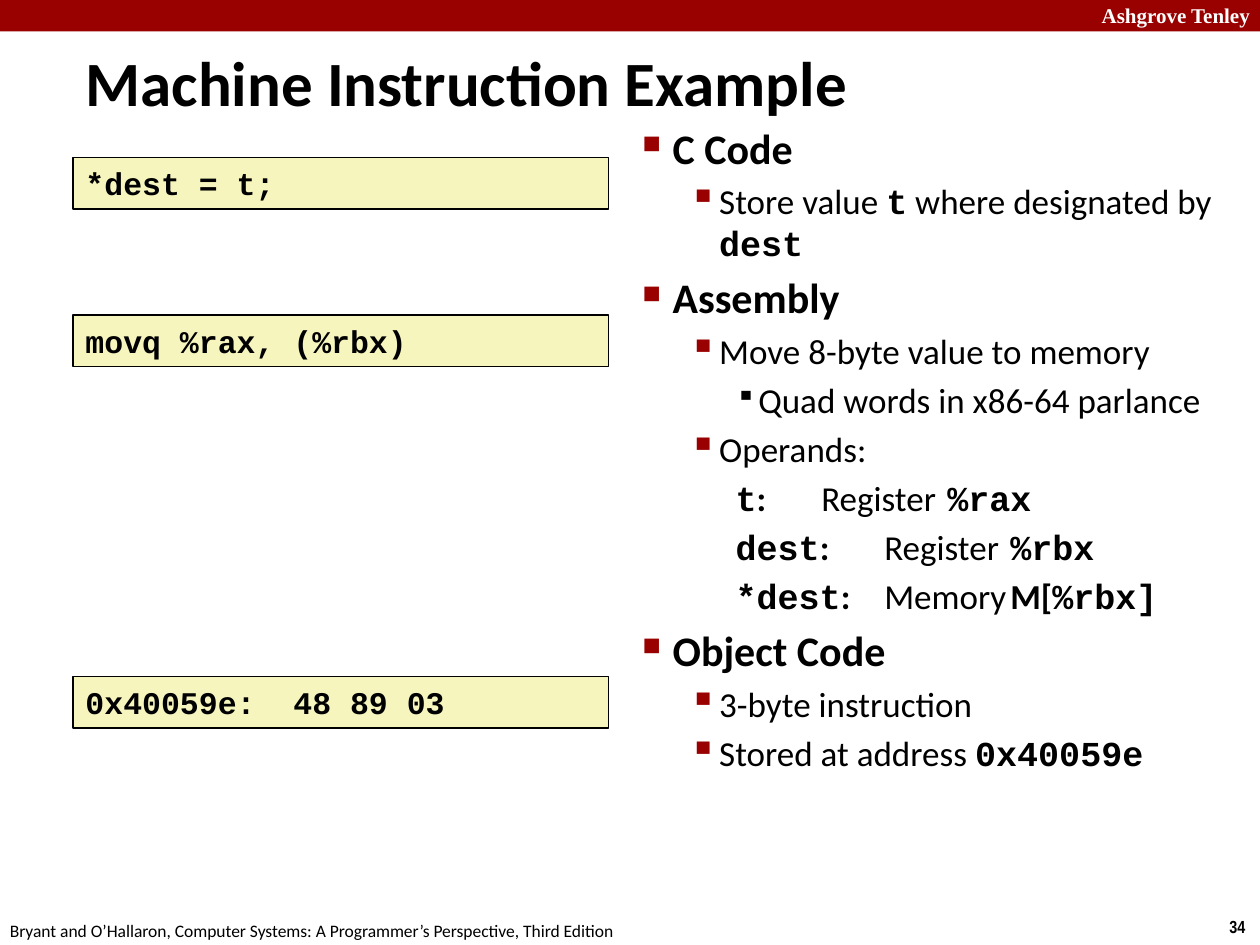
from lxml.etree import SubElement
from pptx import Presentation
from pptx.dml.color import RGBColor
from pptx.enum.shapes import MSO_SHAPE as Shape
from pptx.enum.text import MSO_ANCHOR as Anchor, MSO_AUTO_SIZE as AutoSize, PP_ALIGN as Align
from pptx.oxml.ns import qn
from pptx.util import Pt

BLACK = RGBColor(0x00, 0x00, 0x00)
WHITE = RGBColor(0xFF, 0xFF, 0xFF)
CRIMSON = RGBColor(0x99, 0x00, 0x00)
CREAM = RGBColor(0xF6, 0xF5, 0xBD)

PLAIN = {"name": "Calibri", "bold": False}
BOLD = {"name": "Calibri", "bold": True}
CODE = {"name": "Courier New", "bold": True}

# Level formats: text size, left margin, hanging indent, bullet (character, colour, percent)
LEVELS = {
    "heading": (24, 17.28, 17.28, ("■", CRIMSON, 60)),
    "point": (20, 43.92, 17.28, ("▪", CRIMSON, 110)),
    "detail": (20, 66.24, 12.96, ("▪", BLACK, 80)),
    "operand": (20, 66.24, 12.96, None),
}
TAB_STOPS = (126, 198)

OUTLINE = [
    ("heading", [("C Code", BOLD)]),
    ("point", [("Store value ", PLAIN), ("t", CODE),
               (" where designated by ", PLAIN), ("dest", CODE)]),
    ("heading", [("Assembly", BOLD)]),
    ("point", [("Move 8-byte value to memory", PLAIN)]),
    ("detail", [("Quad words in x86-64 parlance", PLAIN)]),
    ("point", [("Operands:", PLAIN)]),
    ("operand", [("t", CODE), (":", BOLD), ("\tRegister\t", PLAIN), ("%rax", CODE)]),
    ("operand", [("dest", CODE), (":", BOLD), ("\tRegister\t", PLAIN), ("%rbx", CODE)]),
    ("operand", [("*dest", CODE), (":", BOLD), ("\tMemory\t", PLAIN),
                 ("M[", BOLD), ("%rbx]", CODE)]),
    ("heading", [("Object Code", BOLD)]),
    ("point", [("3-byte instruction", PLAIN)]),
    ("point", [("Stored at address ", PLAIN), ("0x40059e", CODE)]),
]

CODE_BOXES = [
    (90, "*dest = t;"),
    (180, "movq %rax, (%rbx)"),
    (386.6, "0x40059e:  48 89 03"),
]


def add_run(paragraph, text, size, style, color=BLACK):
    run = paragraph.add_run()
    run.text = text
    for attribute, value in {**style, "size": Pt(size)}.items():
        setattr(run.font, attribute, value)
    run.font.color.rgb = color


def set_indent(paragraph, margin, hanging):
    properties = paragraph._p.get_or_add_pPr()
    properties.set("marL", str(Pt(margin)))
    properties.set("indent", str(-Pt(hanging)))
    return properties


def add_bullet(properties, bullet):
    if bullet is None:
        SubElement(properties, qn("a:buNone"))
        return
    character, color, percent = bullet
    bullet_color = SubElement(properties, qn("a:buClr"))
    SubElement(bullet_color, qn("a:srgbClr"), val=str(color))
    SubElement(properties, qn("a:buSzPct"), val=str(percent * 1000))
    SubElement(properties, qn("a:buChar"), char=character)


def add_tab_stops(properties):
    stops = SubElement(properties, qn("a:tabLst"))
    for position in TAB_STOPS:
        SubElement(stops, qn("a:tab"), pos=str(Pt(position)), algn="l")


def add_rectangle(slide, left, top, width, height, fill):
    rectangle = slide.shapes.add_shape(
        Shape.RECTANGLE, Pt(left), Pt(top), Pt(width), Pt(height))
    rectangle.shadow.inherit = False
    rectangle.fill.solid()
    rectangle.fill.fore_color.rgb = fill
    return rectangle


def add_label(slide, bounds, text, size, style, color=BLACK, align=Align.LEFT):
    frame = slide.shapes.add_textbox(*map(Pt, bounds)).text_frame
    frame.word_wrap = False
    frame.paragraphs[0].alignment = align
    add_run(frame.paragraphs[0], text, size, style, color)


def format_title(slide, text):
    title = slide.shapes.title
    bounds = {"left": 41.76, "top": 23.76, "width": 571.68, "height": 45.36}
    for attribute, value in bounds.items():
        setattr(title, attribute, Pt(value))
    frame = title.text_frame
    frame.auto_size = AutoSize.NONE
    frame.vertical_anchor = Anchor.MIDDLE
    paragraph = frame.paragraphs[0]
    paragraph.alignment = Align.LEFT
    set_indent(paragraph, 9.36, 9.36)
    add_run(paragraph, text, 36, BOLD)


def add_code_box(slide, top, code):
    box = add_rectangle(slide, 41.76, top, 306, 29.52, CREAM)
    box.line.color.rgb = BLACK
    box.line.width = Pt(1)
    box.text_frame.word_wrap = True
    paragraph = box.text_frame.paragraphs[0]
    paragraph.alignment = Align.LEFT
    add_run(paragraph, code, 18, CODE)


def add_outline(slide):
    frame = slide.shapes.add_textbox(Pt(360), Pt(66.24), Pt(360), Pt(455.76)).text_frame
    frame.word_wrap = True
    for index, (level, runs) in enumerate(OUTLINE):
        paragraph = frame.add_paragraph() if index else frame.paragraphs[0]
        size, margin, hanging, bullet = LEVELS[level]
        paragraph.space_before = Pt(size * 0.2)
        properties = set_indent(paragraph, margin, hanging)
        add_bullet(properties, bullet)
        add_tab_stops(properties)
        for text, style in runs:
            add_run(paragraph, text, size, style)


def main():
    deck = Presentation()
    deck.slide_width, deck.slide_height = Pt(720), Pt(540)
    slide = deck.slides.add_slide(deck.slide_layouts[5])

    banner = add_rectangle(slide, 0, 0, 720, 18, CRIMSON)
    banner.line.fill.background()
    add_label(slide, (622, -2.16, 99.4, 21.6), "Ashgrove Tenley", 12,
              {"name": "Times New Roman", "bold": True}, WHITE, Align.RIGHT)
    add_label(slide, (695.52, 519.84, 24.48, 19.44), "34", 10,
              {"name": "Arial Narrow", "bold": True})
    add_label(slide, (-1.44, 522, 365.76, 19.44),
              "Bryant and O’Hallaron, Computer Systems: A Programmer’s Perspective, Third Edition",
              10, PLAIN)

    format_title(slide, "Machine Instruction Example")
    add_outline(slide)
    for top, code in CODE_BOXES:
        add_code_box(slide, top, code)
    deck.save("out.pptx")


if __name__ == "__main__":
    main()
